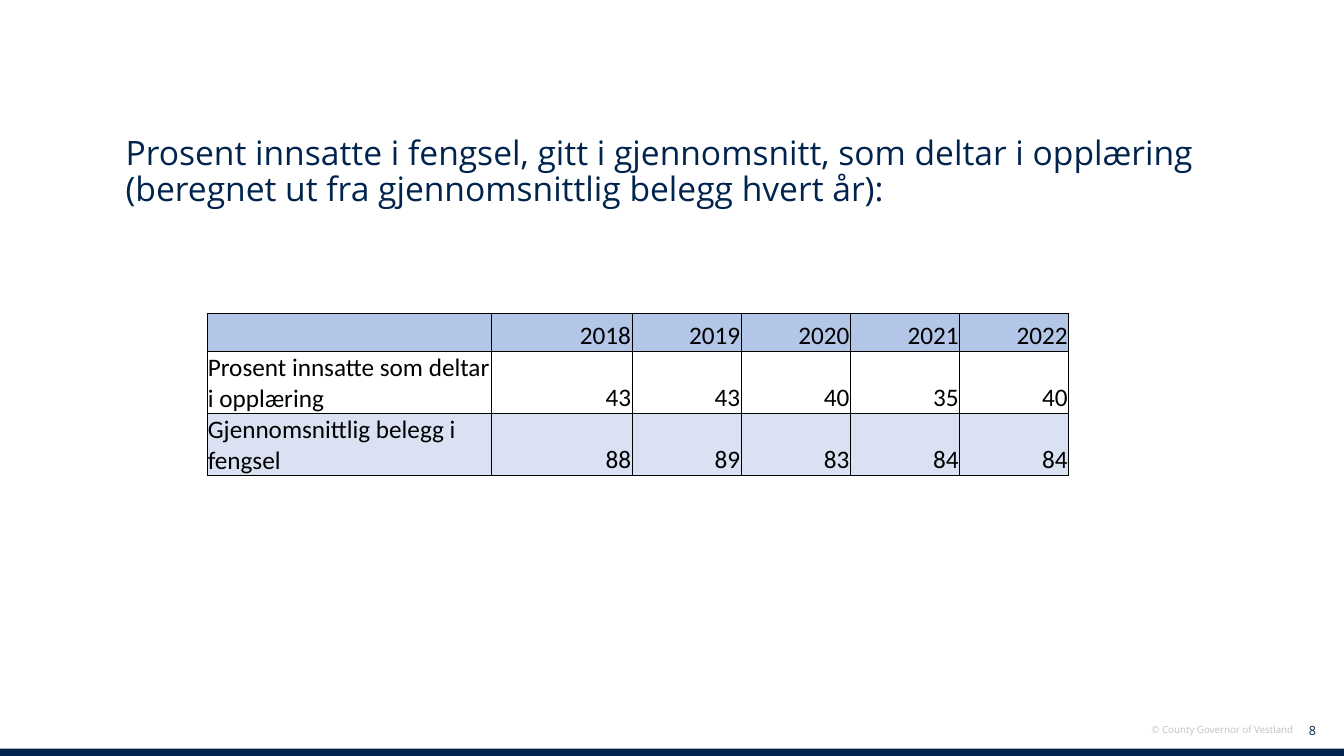
from lxml.etree import SubElement
from pptx import Presentation
from pptx.dml.color import RGBColor
from pptx.enum.shapes import MSO_SHAPE as SHAPE
from pptx.enum.text import MSO_ANCHOR as ANCHOR, MSO_AUTO_SIZE as AUTO, PP_ALIGN as ALIGN
from pptx.oxml.ns import qn
from pptx.util import Pt

PX = 9525  # EMU per px, 96 px to the inch
NAVY, GREY, BLACK = "00244E", "BFC2C0", "000000"
ROW_FILLS = ["B4C6E7", "FFFFFF", "D9E1F2"]
COLUMN_WIDTHS = [271, 134] + [104] * 4
ROW_HEIGHTS = [37, 59, 59]
FIGURES = [
    ["", "2018", "2019", "2020", "2021", "2022"],
    ["Prosent innsatte som deltar i opplæring", "43", "43", "40", "35", "40"],
    ["Gjennomsnittlig belegg i fengsel", "88", "89", "83", "84", "84"],
]


def px(*lengths):
    return [length * PX for length in lengths]


def paint(fill, color):
    fill.solid()
    fill.fore_color.rgb = RGBColor.from_string(color)


def write(frame, text, size, color, font="Open Sans", align=ALIGN.LEFT, spacing=None):
    frame.word_wrap = True
    paragraph = frame.paragraphs[0]
    paragraph.alignment = align
    paragraph.line_spacing = spacing
    run = paragraph.add_run()
    run.text = text
    run.font.name = font
    run.font.size = Pt(size)
    run.font.color.rgb = RGBColor.from_string(color)


def add_title(slide, text, box):
    title = slide.shapes.title
    title.left, title.top, title.width, title.height = px(*box)
    frame = title.text_frame
    frame.auto_size = AUTO.NONE
    frame.vertical_anchor = ANCHOR.BOTTOM
    write(frame, text, 24, NAVY, spacing=0.9)


def add_footer(slide, text, box, size, color, anchor=ANCHOR.TOP):
    frame = slide.shapes.add_textbox(*px(*box)).text_frame
    frame.vertical_anchor = anchor
    write(frame, text, size, color, align=ALIGN.RIGHT)


def add_bar(slide, box, color):
    bar = slide.shapes.add_shape(SHAPE.RECTANGLE, *px(*box))
    bar.shadow.inherit = False
    paint(bar.fill, color)
    bar.line.fill.background()


def add_borders(cell, color, width):
    properties = cell._tc.get_or_add_tcPr()
    for side in ("lnL", "lnR", "lnT", "lnB"):
        line = SubElement(properties, qn(f"a:{side}"), w=str(Pt(width)))
        SubElement(SubElement(line, qn("a:solidFill")), qn("a:srgbClr"), val=color)


def add_figures(slide, left, top):
    size = px(left, top, sum(COLUMN_WIDTHS), sum(ROW_HEIGHTS))
    table = slide.shapes.add_table(len(FIGURES), len(COLUMN_WIDTHS), *size).table
    for column, width in zip(table.columns, px(*COLUMN_WIDTHS)):
        column.width = width
    for row, height, fill, values in zip(table.rows, px(*ROW_HEIGHTS), ROW_FILLS, FIGURES):
        row.height = height
        for index, (cell, value) in enumerate(zip(row.cells, values)):
            cell.margin_left = cell.margin_right = cell.margin_top = PX
            cell.margin_bottom = 0
            cell.vertical_anchor = ANCHOR.BOTTOM
            add_borders(cell, BLACK, 0.5)
            paint(cell.fill, fill)
            write(cell.text_frame, value, 18, BLACK, font="Calibri",
                  align=ALIGN.RIGHT if index else ALIGN.LEFT)


def main():
    deck = Presentation()
    deck.slide_width, deck.slide_height = px(1280, 720)
    slide = deck.slides.add_slide(deck.slide_layouts[5])

    # Footer
    add_bar(slide, (0, 713, 1280, 7), NAVY)
    add_footer(slide, "8", (1211, 683, 52, 25), 9, NAVY, ANCHOR.MIDDLE)
    add_footer(slide, "© County Governor of Vestland", (1042, 685, 199, 21), 7, GREY)

    # Heading and yearly figures
    add_title(slide, "Prosent innsatte i fengsel, gitt i gjennomsnitt, som deltar i opplæring "
              "(beregnet ut fra gjennomsnittlig belegg hvert år):", (110, 91, 1058, 113))
    add_figures(slide, 197, 298)

    deck.save("out.pptx")


if __name__ == "__main__":
    main()
